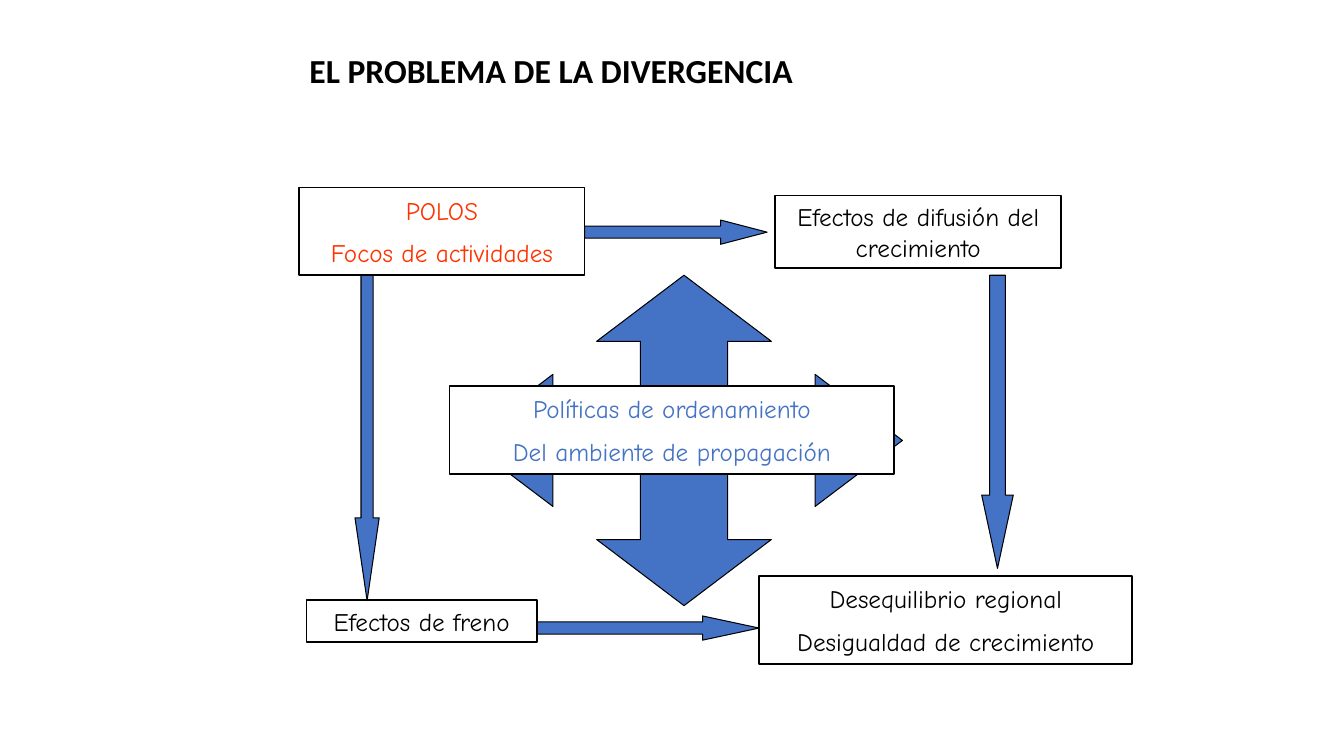
"""Build the slide on the problem of regional divergence."""
from pptx import Presentation
from pptx.dml.color import RGBColor
from pptx.enum.shapes import MSO_SHAPE as Shape
from pptx.enum.text import MSO_ANCHOR as Anchor, PP_ALIGN as Align
from pptx.util import Pt

BLACK = RGBColor(0x00, 0x00, 0x00)
WHITE = RGBColor(0xFF, 0xFF, 0xFF)
BLUE = RGBColor(0x44, 0x72, 0xC4)
ORANGE = RGBColor(0xFF, 0x33, 0x00)


def write(box, lines, color=BLACK, font="Comic Neue", size=18, bold=False, align=Align.CENTER):
    frame = box.text_frame
    frame.word_wrap = True
    frame.vertical_anchor = Anchor.MIDDLE
    frame.margin_left = frame.margin_right = Pt(7.2)
    frame.margin_top = frame.margin_bottom = Pt(3.6)
    for number, line in enumerate(lines):
        para = frame.add_paragraph() if number else frame.paragraphs[0]
        para.alignment = align
        para.space_before = Pt(size / 2 if number else 0)
        span = para.add_run()
        span.text = line
        span.font.name = font
        span.font.size = Pt(size)
        span.font.bold = bold
        span.font.color.rgb = color


def paint(shape, fill, width):
    shape.shadow.inherit = False
    if fill is None:
        shape.fill.background()
    else:
        shape.fill.solid()
        shape.fill.fore_color.rgb = fill
    shape.line.color.rgb = BLACK
    shape.line.width = Pt(width)


deck = Presentation()
deck.slide_width, deck.slide_height = Pt(960), Pt(540)
page = deck.slides.add_slide(deck.slide_layouts[5])

title = page.shapes.title
title.left, title.top, title.width, title.height = Pt(213.8), Pt(32), Pt(532.8), Pt(36.4)
write(title, ["EL PROBLEMA DE LA DIVERGENCIA"], font="Calibri", size=24, bold=True, align=Align.LEFT)

arrows = [
    (Shape.RIGHT_ARROW, 417.6, 157.2, 130.3, 17.3, 1.917),
    (Shape.DOWN_ARROW, 253.6, 196.6, 17.3, 232.4, 3.419),
    (Shape.RIGHT_ARROW, 383.6, 440, 158.6, 17.3, 2.335),
    (Shape.DOWN_ARROW, 701.2, 196.6, 22.6, 209.4, 2.319),
]
for kind, left, top, width, height, head in arrows:
    arrow = page.shapes.add_shape(kind, Pt(left), Pt(top), Pt(width), Pt(height))
    arrow.adjustments[0] = 0.5
    arrow.adjustments[1] = head
    paint(arrow, BLUE, 0.75)

# The four-way arrow is one arm on a 10 by 10 grid, turned a quarter each time.
arm = [(5, 0), (3, 2), (4, 2), (4, 4), (2, 4), (2, 3)]
outline = []
for quarter in range(4):
    outline += arm
    arm = [(y, 10 - x) for x, y in arm]
builder = page.shapes.build_freeform(*outline[0], scale=(Pt(31.2), Pt(23.6)))
builder.add_line_segments(outline[1:], close=True)
paint(builder.convert_to_shape(Pt(332.6), Pt(196.6)), BLUE, 0.75)

boxes = [
    (213.8, 134, 203.8, 62.6, None, ORANGE, ["POLOS", "Focos de actividades"]),
    (553.7, 139.6, 204.4, 52, None, BLACK, ["Efectos de difusión del crecimiento"]),
    (219, 428.6, 164.4, 30.2, None, BLACK, ["Efectos de freno"]),
    (321.2, 275.8, 317.6, 62.6, WHITE, BLUE,
     ["Políticas de ordenamiento", "Del ambiente de propagación"]),
    (542.2, 411.6, 266.6, 62.6, None, BLACK,
     ["Desequilibrio regional", "Desigualdad de crecimiento"]),
]
for left, top, width, height, fill, color, lines in boxes:
    box = page.shapes.add_shape(Shape.RECTANGLE, Pt(left), Pt(top), Pt(width), Pt(height))
    paint(box, fill, 1.25)
    write(box, lines, color=color)

deck.save("out.pptx")
